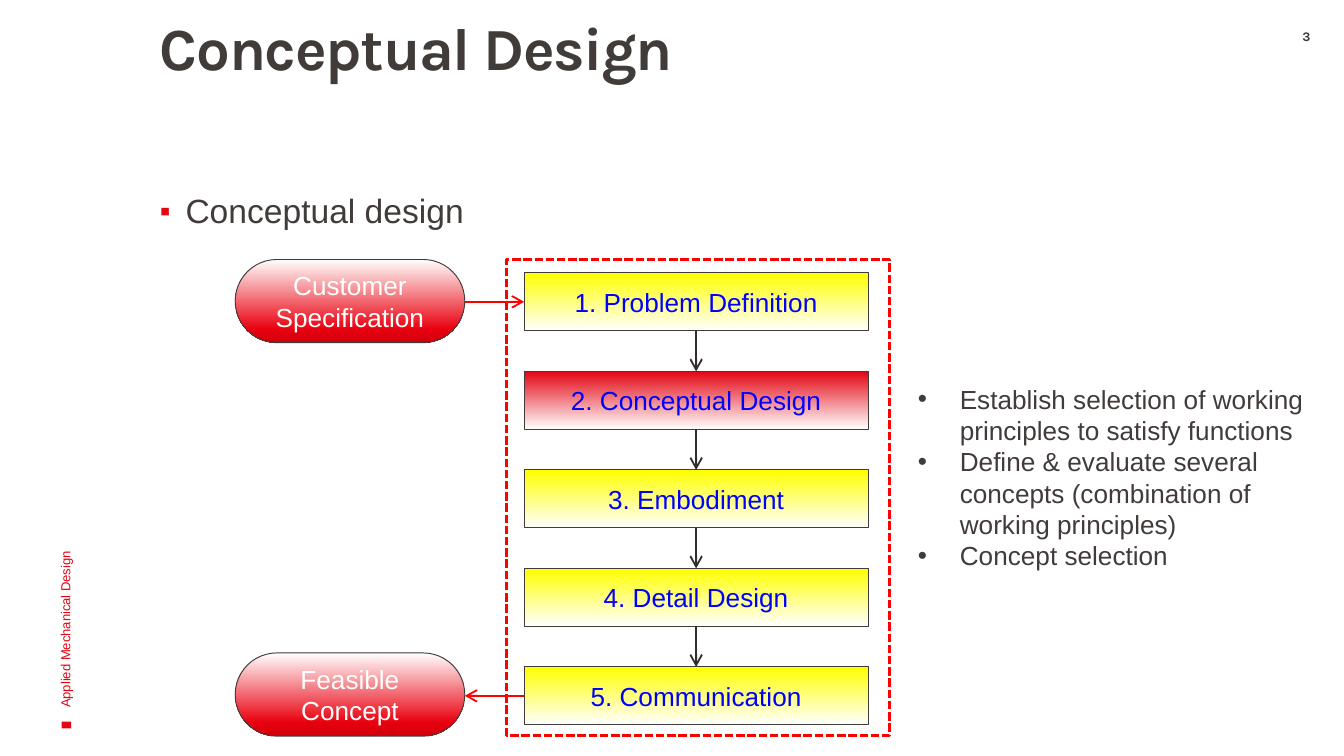
from lxml import etree
from pptx import Presentation, util as u
from pptx.dml.color import RGBColor
from pptx.enum import dml, shapes, text
from pptx.oxml.ns import qn

COLORS = {"ink": "413C3A", "arrow": "312D2B", "brand": "E30613", "red": "FF0000",
          "yellow": "FFFF00", "white": "FFFFFF", "blue": "0000FF",
          "pill": "E9000E", "pill_dark": "CF000C"}
PILL_STOPS = [(0, "white"), (84, "pill"), (100, "pill_dark")]
STEPS = ["1. Problem Definition", "2. Conceptual Design", "3. Embodiment",
         "4. Detail Design", "5. Communication"]
NOTES = ["Establish selection of working principles to satisfy functions",
         "Define & evaluate several concepts (combination of working principles)",
         "Concept selection"]


def rgb(name):
    """Return the named colour."""
    return RGBColor.from_string(COLORS[name])


def place(sp, box):
    """Move a shape to a box given in points."""
    sp.left, sp.top, sp.width, sp.height = (u.Pt(v) for v in box)


def add_bullet(p, char, indent, color=None, size=None):
    """Give a paragraph a hanging bullet."""
    pPr = p._p.get_or_add_pPr()
    pPr.set("marL", str(u.Pt(indent)))
    pPr.set("indent", str(-u.Pt(indent)))
    if color:
        clr = etree.SubElement(pPr, qn("a:buClr"))
        etree.SubElement(clr, qn("a:srgbClr"), val=COLORS[color])
    if size:
        etree.SubElement(pPr, qn("a:buSzPct"), val=str(size * 1000))
    etree.SubElement(pPr, qn("a:buFont"), typeface="Arial")
    etree.SubElement(pPr, qn("a:buChar"), char=char)


def write(sp, lines, size=14, font="Arial", color="ink", bold=False, align="LEFT",
          anchor="TOP", insets=(7.2, 3.6, 7.2, 3.6), leading=None, bullet=None, spacing=None):
    """Fill a shape with formatted paragraphs."""
    tf = sp.text_frame
    tf.word_wrap = True
    tf.auto_size = text.MSO_AUTO_SIZE.NONE
    tf.vertical_anchor = text.MSO_ANCHOR[anchor]
    tf.margin_left, tf.margin_top, tf.margin_right, tf.margin_bottom = (u.Pt(v) for v in insets)
    for i, line in enumerate(lines):
        p = tf.add_paragraph() if i else tf.paragraphs[0]
        p.alignment = text.PP_ALIGN[align]
        p.space_before = u.Pt(0)
        if leading:
            p.line_spacing = leading
        if bullet:
            add_bullet(p, **bullet)
        r = p.add_run()
        r.text = line
        r.font.size, r.font.name, r.font.bold = u.Pt(size), font, bold
        r.font.color.rgb = rgb(color)
        if spacing:
            r._r.get_or_add_rPr().set("spc", str(round(spacing * 100)))


def add_text(s, box, lines, **fmt):
    """Add a text box."""
    sp = s.shapes.add_textbox(*(u.Pt(v) for v in box))
    write(sp, lines, **fmt)
    return sp


def add_block(s, kind, box, line=None, width=0.5):
    """Add an unfilled preset shape without shadow."""
    sp = s.shapes.add_shape(shapes.MSO_SHAPE[kind], *(u.Pt(v) for v in box))
    sp.shadow.inherit = False
    sp.fill.background()
    if line:
        sp.line.color.rgb = rgb(line)
        sp.line.width = u.Pt(width)
    else:
        sp.line.fill.background()
    return sp


def add_node(s, box, label, stops, rounding, color):
    """Add a labelled block with a vertical gradient."""
    sp = add_block(s, "ROUNDED_RECTANGLE", box, "ink")
    sp.adjustments[0] = rounding
    sp.fill.gradient()
    sp.fill.gradient_angle = 270
    gs_list = sp._element.spPr.find(qn("a:gradFill")).find(qn("a:gsLst"))
    for gs in list(gs_list):
        gs_list.remove(gs)
    for pos, name in stops:
        gs = etree.SubElement(gs_list, qn("a:gs"), pos=str(pos * 1000))
        etree.SubElement(gs, qn("a:srgbClr"), val=COLORS[name])
    write(sp, [label], color=color, align="CENTER", anchor="MIDDLE")


def add_arrow(s, x1, y1, x2, y2, color):
    """Add a straight arrow."""
    c = s.shapes.add_connector(shapes.MSO_CONNECTOR.STRAIGHT,
                               *(u.Pt(v) for v in (x1, y1, x2, y2)))
    c.line.color.rgb = rgb(color)
    c.line.width = u.Pt(1)
    etree.SubElement(c.line._get_or_add_ln(), qn("a:tailEnd"), type="arrow")
    etree.SubElement(c._element.spPr, qn("a:effectLst"))


def add_sidebar(s, box):
    """Add the rotated course name and its square marker."""
    x, y, w, h = box
    marker = add_block(s, "RECTANGLE", (x + 130.3, y + 167, 3.6, 5))
    marker.fill.solid()
    marker.fill.fore_color.rgb = rgb("brand")
    label = add_text(s, box, ["Applied Mechanical Design"], size=7, color="brand",
                     anchor="MIDDLE")
    marker.rotation = label.rotation = 270


def add_flow(s, box):
    """Draw the framed steps with their input and output."""
    x, y, w, h = box
    pill_w, pill_h, step_h, pad = 123, 44.6, 31, 7.2
    frame_x, step_x, step_w = x + 145.4, x + 154.8, 184.3
    frame = add_block(s, "RECTANGLE", (frame_x, y, w - 145.4, h), "red", 1.5)
    frame.line.dash_style = dml.MSO_LINE.SQUARE_DOT
    frame.line._get_or_add_ln().find(qn("a:prstDash")).set("val", "sysDash")

    for label, top in (("Customer Specification", y), ("Feasible Concept", y + 210.8)):
        add_node(s, (x, top, pill_w, pill_h), label, PILL_STOPS, 0.5, "white")

    pitch = (h - 2 * pad + 1.5 - step_h) / (len(STEPS) - 1)
    mid = step_x + step_w / 2
    for i, label in enumerate(STEPS):
        top = y + pad + i * pitch
        start = "brand" if i == 1 else "yellow"
        add_node(s, (step_x, top, step_w, step_h), label, [(0, start), (100, "white")], 0, "blue")
        if i:
            add_arrow(s, mid, top - pitch + step_h, mid, top, "arrow")

    first = y + pad + step_h / 2
    last = first + pitch * (len(STEPS) - 1)
    add_arrow(s, x + pill_w, first, step_x, first, "red")
    add_arrow(s, step_x, last, x + pill_w, last, "red")


def add_headings(s, box):
    """Fill the title and body placeholders."""
    x, y, w, h = box
    title, body = s.shapes.title, s.placeholders[1]
    place(title, (x, y, 471.6, 84.2))
    write(title, ["Conceptual Design"], size=32, font="Karla", bold=True,
          insets=(14.4, 0, 5.8, 3.6), leading=0.9, spacing=-0.7)
    place(body, (x, y + 90.7, w, h - 90.7))
    write(body, ["Conceptual design"], size=18, insets=(14.4, 3.6, 7.2, 3.6), leading=0.9,
          bullet={"char": "▪", "indent": 13.7, "color": "brand", "size": 90})


def main():
    """Build and save the slide."""
    prs = Presentation()
    prs.slide_width, prs.slide_height = u.Pt(720), u.Pt(405)
    s = prs.slides.add_slide(prs.slide_layouts[1])
    add_headings(s, (71.3, 10.1, 608.4, 375.8))
    add_sidebar(s, (-96.5, 218.9, 262.8, 72))
    add_text(s, (679.7, 15.1, 40.3, 13), ["3"], size=7, font="Karla", bold=True,
             align="CENTER", insets=(7.2, 0, 7.2, 0))
    add_flow(s, (126, 139, 350.6, 255))
    add_text(s, (484.6, 201.6, 235.4, 108.7), NOTES, bullet={"char": "•", "indent": 22.5})
    prs.save("out.pptx")


if __name__ == "__main__":
    main()
